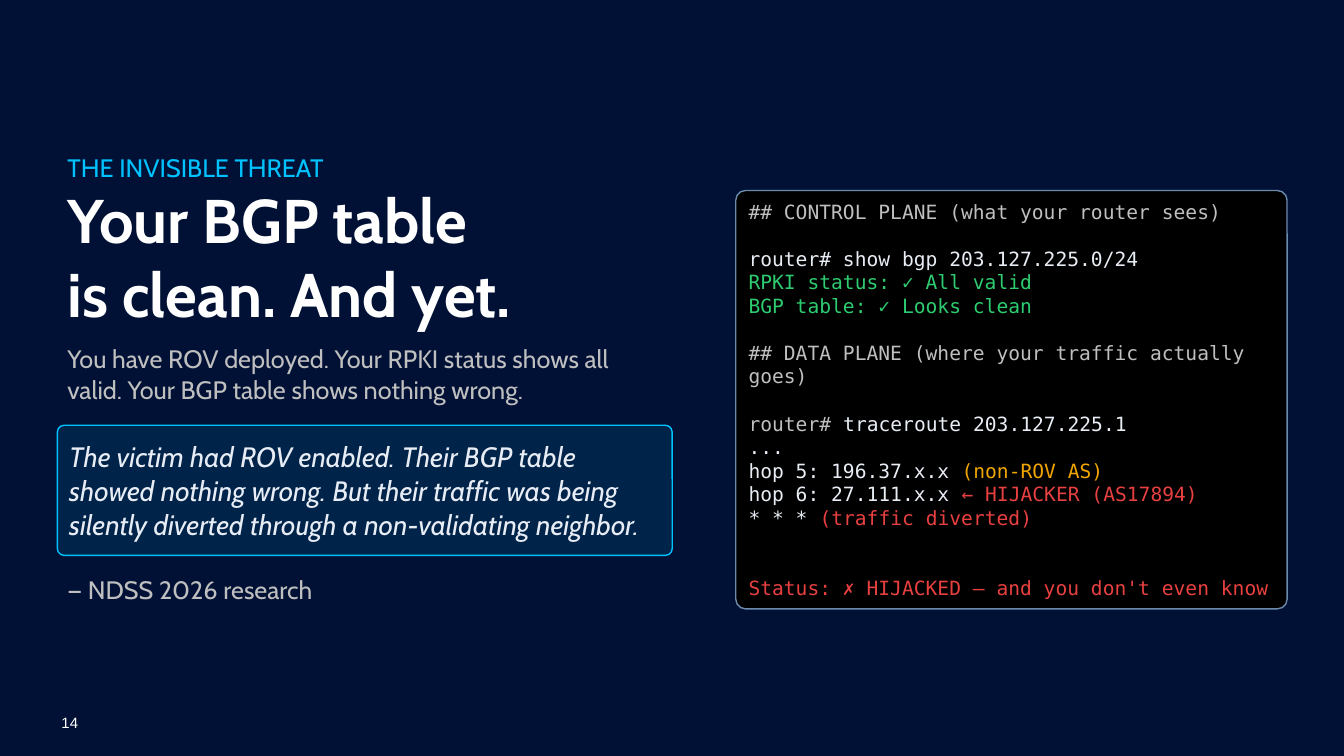
from lxml.etree import SubElement
from pptx import Presentation
from pptx.dml.color import RGBColor
from pptx.enum.shapes import MSO_SHAPE
from pptx.enum.text import MSO_ANCHOR, MSO_AUTO_SIZE, PP_ALIGN
from pptx.oxml.ns import qn
from pptx.util import Pt

COLORS = {
    "navy": "001135", "black": "000000", "white": "FFFFFF", "pale": "E8EDF5",
    "gray": "BFBFBF", "steel": "6B8AAD", "cyan": "00C2FF", "green": "2ECC71",
    "amber": "F0A500", "red": "E84040",
}


def rgb(name):
    return RGBColor.from_string(COLORS[name])


def add_text(p, text, size=18, color="gray", font="Cabin", bold=False, italic=False):
    p.alignment = PP_ALIGN.LEFT
    r = p.add_run()
    r.text = text
    r.font.size = Pt(size)
    r.font.name = font
    r.font.bold = bold
    r.font.italic = italic
    r.font.color.rgb = rgb(color)


prs = Presentation()
prs.slide_width, prs.slide_height = Pt(960), Pt(540)
s = prs.slides.add_slide(prs.slide_layouts[5])
s.background.fill.solid()
s.background.fill.fore_color.rgb = rgb("navy")

title = s.shapes.title
title.left, title.top, title.width, title.height = Pt(41), Pt(104.4), Pt(756), Pt(135.4)
tf = title.text_frame
tf.auto_size = MSO_AUTO_SIZE.NONE
tf.vertical_anchor = MSO_ANCHOR.MIDDLE
add_text(tf.paragraphs[0], "THE INVISIBLE THREAT", color="cyan")
for line in ("Your BGP table", "is clean. And yet."):
    add_text(tf.add_paragraph(), line, size=44, color="white", bold=True)

notes = [
    (241.9, 443.5, 51.1, "You have ROV deployed. Your RPKI status shows all valid. "
                         "Your BGP table shows nothing wrong."),
    (406.8, 480.2, 28.8, "— NDSS 2026 research"),
]
for top, width, height, text in notes:
    tf = s.shapes.add_textbox(Pt(41), Pt(top), Pt(width), Pt(height)).text_frame
    tf.word_wrap = True
    add_text(tf.paragraphs[0], text)

panels = {}
for name, box, radius, fill, line in [
    ("terminal", (525.6, 136.1, 393.8, 298.8), 0.023, "black", "steel"),
    ("quote", (41, 303.8, 439.2, 92.9), 0.052, "cyan", "cyan"),
]:
    sp = s.shapes.add_shape(MSO_SHAPE.ROUNDED_RECTANGLE, *map(Pt, box))
    sp.adjustments[0] = radius
    sp.shadow.inherit = False
    sp.fill.solid()
    sp.fill.fore_color.rgb = rgb(fill)
    sp.line.color.rgb = rgb(line)
    sp.line.width = Pt(1)
    sp.text_frame.word_wrap = True
    sp.text_frame.vertical_anchor = MSO_ANCHOR.MIDDLE
    panels[name] = sp

quote = panels["quote"]
tint = quote.fill._xPr.find(qn("a:solidFill")).find(qn("a:srgbClr"))
SubElement(tint, qn("a:alpha"), val="10000")
add_text(quote.text_frame.paragraphs[0],
         "The victim had ROV enabled. Their BGP table showed nothing wrong. "
         "But their traffic was being silently diverted through a non-validating neighbor.",
         size=20, color="pale", italic=True)

session = [
    (0, [("## CONTROL PLANE (what your router sees)", "gray")]),
    (1, [("router# show bgp 203.127.225.0/24", "pale")]),
    (0, [("RPKI status: ✓ All valid", "green")]),
    (0, [("BGP table: ✓ Looks clean", "green")]),
    (1, [("## DATA PLANE (where your traffic actually goes)", "gray")]),
    (1, [("router# ", "gray"), ("traceroute 203.127.225.1", "pale")]),
    (0, [("...", "pale")]),
    (0, [("hop 5: 196.37.x.x ", "pale"), ("(non-ROV AS)", "amber")]),
    (0, [("hop 6: 27.111.x.x ", "pale"), ("← HIJACKER (AS17894)", "red")]),
    (0, [("* * * ", "pale"), ("(traffic diverted)", "red")]),
    (2, [("Status: ✗ HIJACKED — and you don't even know", "red")]),
]
tf = panels["terminal"].text_frame
for i, (gap_lines, runs) in enumerate(session):
    p = tf.add_paragraph() if i else tf.paragraphs[0]
    if gap_lines:
        p.space_before = Pt(16.8 * gap_lines)
    for text, color in runs:
        add_text(p, text, size=14, color=color, font="DejaVu Sans Mono")

tf = s.shapes.add_textbox(Pt(43.9), Pt(509.8), Pt(13), Pt(13)).text_frame
tf.margin_left = tf.margin_right = tf.margin_top = tf.margin_bottom = 0
tf.word_wrap = False
tf.vertical_anchor = MSO_ANCHOR.BOTTOM
add_text(tf.paragraphs[0], "14", size=10.7, color="white", font="Arial")

prs.save("out.pptx")
